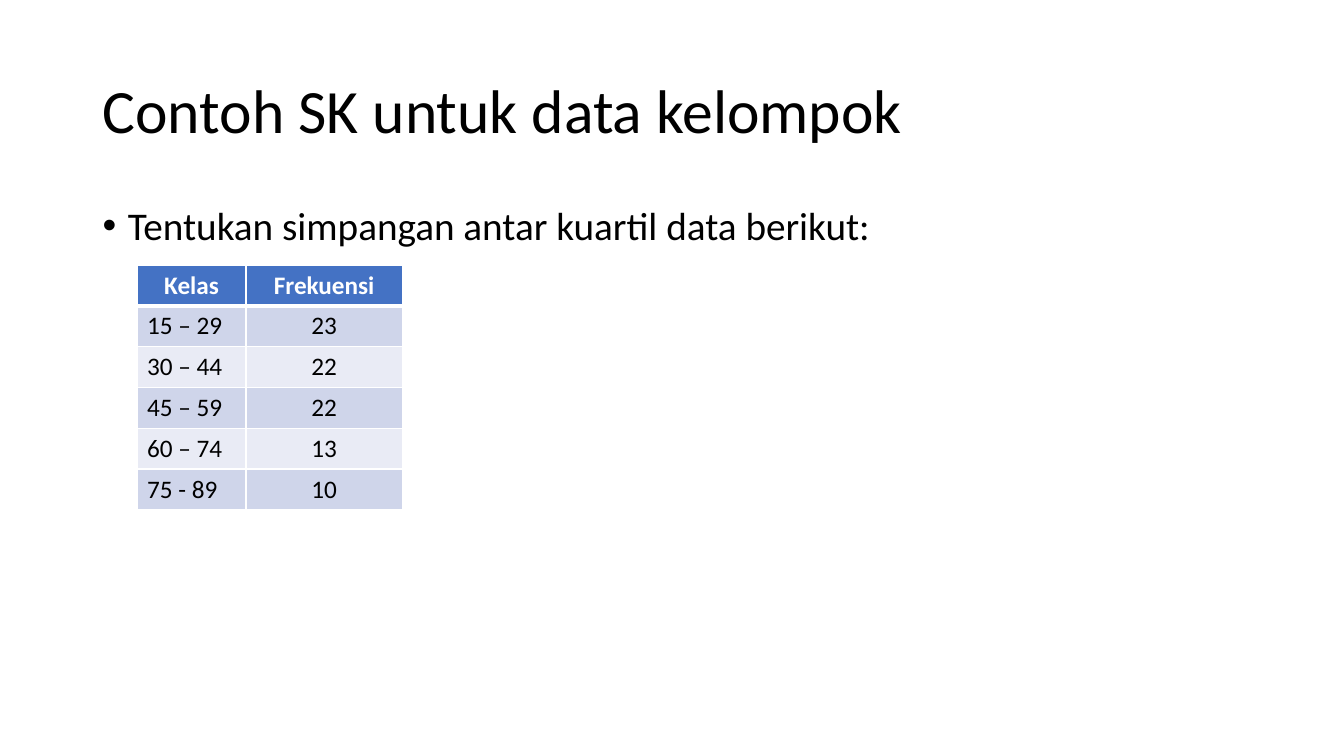
from dataclasses import dataclass

from lxml import etree
from pptx import Presentation
from pptx.dml.color import RGBColor
from pptx.enum.text import MSO_ANCHOR, PP_ALIGN
from pptx.oxml.ns import qn
from pptx.util import Emu, Inches, Pt

LEFT, CENTER = PP_ALIGN.LEFT, PP_ALIGN.CENTER
TOP, MIDDLE = MSO_ANCHOR.TOP, MSO_ANCHOR.MIDDLE
BLANK_LAYOUT = 6


@dataclass(frozen=True)
class Theme:
    font: str = "Calibri"
    title_size: int = 44
    body_size: int = 28
    table_size: int = 18
    text: str = "000000"
    light: str = "FFFFFF"
    header: str = "4472C4"
    bands: tuple = ("CFD5EA", "E9EBF5")
    thin_border: int = 1
    header_border: int = 3


THEME = Theme()
COLUMN_WIDTHS = (1.08, 1.55)
ROW_HEIGHT = 0.405
FREQUENCIES = (
    ("Kelas", "Frekuensi"),
    ("15 – 29", "23"),
    ("30 – 44", "22"),
    ("45 – 59", "22"),
    ("60 – 74", "13"),
    ("75 - 89", "10"),
)


def write_text(frame, text, *, size, color=THEME.text, bold=False,
               align=LEFT, line_spacing=1.0, space_before=0):
    paragraph = frame.paragraphs[0]
    paragraph.alignment = align
    paragraph.line_spacing = line_spacing
    paragraph.space_before = Pt(space_before)
    run = paragraph.add_run()
    run.text = text
    run.font.name = THEME.font
    run.font.size = Pt(size)
    run.font.bold = bold
    run.font.color.rgb = RGBColor.from_string(color)
    return paragraph


def add_text_frame(slide, box, anchor):
    frame = slide.shapes.add_textbox(*box).text_frame
    frame.word_wrap = True
    frame.vertical_anchor = anchor
    return frame


def add_title(slide, box, text):
    frame = add_text_frame(slide, box, MIDDLE)
    write_text(frame, text, size=THEME.title_size, line_spacing=0.9)


def add_bullet(slide, box, text):
    frame = add_text_frame(slide, box, TOP)
    paragraph = write_text(frame, text, size=THEME.body_size,
                           line_spacing=0.9, space_before=10)
    properties = paragraph._p.get_or_add_pPr()
    indent = Inches(0.25)
    properties.set("marL", str(indent))
    properties.set("indent", str(-indent))
    etree.SubElement(properties, qn("a:buFont"), typeface="Arial")
    etree.SubElement(properties, qn("a:buChar"), char="•")


def set_borders(cell, widths):
    """Draw the left, right, top and bottom borders, widths in points."""
    properties = cell._tc.get_or_add_tcPr()
    for position, (side, width) in enumerate(zip("LRTB", widths)):
        line = etree.Element(qn(f"a:ln{side}"), w=str(Pt(width)))
        fill = etree.SubElement(line, qn("a:solidFill"))
        etree.SubElement(fill, qn("a:srgbClr"), val=THEME.light)
        properties.insert(position, line)


def add_frequency_table(slide, box, rows):
    table = slide.shapes.add_table(len(rows), len(rows[0]), *box).table
    for column, share in zip(table.columns, COLUMN_WIDTHS):
        column.width = Emu(int(box[2] * share / sum(COLUMN_WIDTHS)))
    thin, thick = THEME.thin_border, THEME.header_border
    for row_index, values in enumerate(rows):
        is_header = row_index == 0
        fill = THEME.header if is_header else THEME.bands[(row_index - 1) % 2]
        top = thick if row_index == 1 else thin
        bottom = thick if is_header else thin
        for column_index, value in enumerate(values):
            cell = table.cell(row_index, column_index)
            cell.fill.solid()
            cell.fill.fore_color.rgb = RGBColor.from_string(fill)
            set_borders(cell, (thin, thin, top, bottom))
            write_text(cell.text_frame, value, size=THEME.table_size,
                       color=THEME.light if is_header else THEME.text,
                       bold=is_header,
                       align=CENTER if is_header or column_index else LEFT)


def inches(*lengths):
    return tuple(Inches(length) for length in lengths)


def main():
    presentation = Presentation()
    presentation.slide_width, presentation.slide_height = inches(13.33, 7.5)
    slide = presentation.slides.add_slide(
        presentation.slide_layouts[BLANK_LAYOUT])
    add_title(slide, inches(0.92, 0.4, 11.5, 1.45),
              "Contoh SK untuk data kelompok")
    add_bullet(slide, inches(0.92, 2, 11.5, 4.76),
               "Tentukan simpangan antar kuartil data berikut:")
    table_box = inches(1.36, 2.63, sum(COLUMN_WIDTHS),
                       ROW_HEIGHT * len(FREQUENCIES))
    add_frequency_table(slide, table_box, FREQUENCIES)
    presentation.save("out.pptx")


if __name__ == "__main__":
    main()
